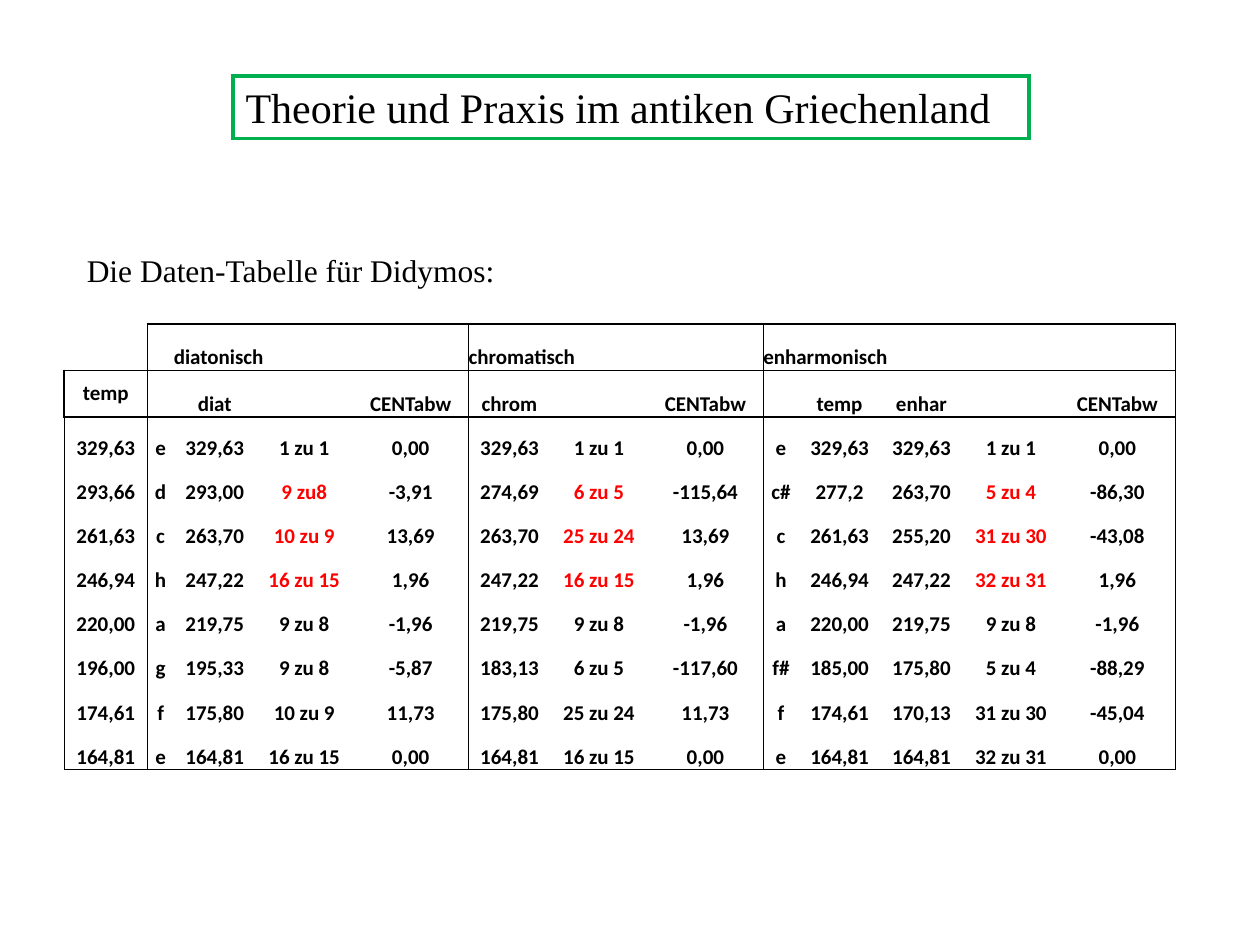
from lxml import etree
from pptx import Presentation
from pptx.dml.color import RGBColor
from pptx.enum.text import MSO_ANCHOR, PP_ALIGN
from pptx.oxml.ns import qn
from pptx.util import Inches, Pt

BOTTOM, MIDDLE = MSO_ANCHOR.BOTTOM, MSO_ANCHOR.MIDDLE
LEFT, CENTER = PP_ALIGN.LEFT, PP_ALIGN.CENTER
COLORS = {"text": "000000", "accent": "FF0000", "frame": "00B050", "paper": "FFFFFF"}
SERIF, SANS = "Times New Roman", "Calibri"
NO_GRID_STYLE = "{2D5ABB26-0587-4C30-8999-92F81FD0307C}"

COLUMN_WIDTHS = [0.66, 0.21, 0.65, 0.77, 0.92, 0.65, 0.77, 0.92, 0.28, 0.65, 0.65, 0.77, 0.92]
HEADER_HEIGHT, BODY_HEIGHT = 0.37, 0.35
HEADER_ROWS = 2
GENUS_STARTS, GENUS_ENDS = (0, 1, 5, 8), (0, 4, 7, 12)
GENUS_TITLES = {2: ("diatonisch", 2), 5: ("chromatisch", 2), 8: ("enharmonisch", 3)}
RATIO_COLUMNS, RATIO_ROWS = (3, 6, 11), (3, 4, 5)

COLUMN_TITLES = ["temp", "", "diat", "", "CENTabw", "chrom", "", "CENTabw",
                 "", "temp", "enhar", "", "CENTabw"]
PITCHES = [
    ["329,63", "e", "329,63", "1 zu 1", "0,00", "329,63", "1 zu 1", "0,00",
     "e", "329,63", "329,63", "1 zu 1", "0,00"],
    ["293,66", "d", "293,00", "9 zu8", "-3,91", "274,69", "6 zu 5", "-115,64",
     "c#", "277,2", "263,70", "5 zu 4", "-86,30"],
    ["261,63", "c", "263,70", "10 zu 9", "13,69", "263,70", "25 zu 24", "13,69",
     "c", "261,63", "255,20", "31 zu 30", "-43,08"],
    ["246,94", "h", "247,22", "16 zu 15", "1,96", "247,22", "16 zu 15", "1,96",
     "h", "246,94", "247,22", "32 zu 31", "1,96"],
    ["220,00", "a", "219,75", "9 zu 8", "-1,96", "219,75", "9 zu 8", "-1,96",
     "a", "220,00", "219,75", "9 zu 8", "-1,96"],
    ["196,00", "g", "195,33", "9 zu 8", "-5,87", "183,13", "6 zu 5", "-117,60",
     "f#", "185,00", "175,80", "5 zu 4", "-88,29"],
    ["174,61", "f", "175,80", "10 zu 9", "11,73", "175,80", "25 zu 24", "11,73",
     "f", "174,61", "170,13", "31 zu 30", "-45,04"],
    ["164,81", "e", "164,81", "16 zu 15", "0,00", "164,81", "16 zu 15", "0,00",
     "e", "164,81", "164,81", "32 zu 31", "0,00"],
]


def rgb(name):
    """Return the named colour."""
    return RGBColor.from_string(COLORS[name])


def write(frame, text, size, font, color="text", bold=False, align=LEFT):
    """Write one formatted run into a text frame."""
    paragraph = frame.paragraphs[0]
    paragraph.alignment = align
    run = paragraph.add_run()
    run.text = text
    for attribute, value in {"size": Pt(size), "name": font, "bold": bold}.items():
        setattr(run.font, attribute, value)
    run.font.color.rgb = rgb(color)


def add_line_of_text(slide, box, text, size, wrap=False):
    """Place a single line of serif text in the box."""
    label = slide.shapes.add_textbox(*map(Inches, box))
    label.text_frame.word_wrap = wrap
    write(label.text_frame, text, size, SERIF)
    return label


def add_title(slide, box):
    """Place the framed slide title."""
    title = add_line_of_text(slide, box, "Theorie und Praxis im antiken Griechenland", 24, True)
    title.fill.solid()
    title.fill.fore_color.rgb = rgb("paper")
    title.line.color.rgb = rgb("frame")
    title.line.width = Pt(2.25)
    outline = title._element.spPr.find(qn("a:ln"))
    etree.SubElement(outline, qn("a:miter"), lim="800000")


def cell_borders(row, column, last_row):
    """Return the border widths by side for one cell, zero meaning no line."""
    if (row, column) == (0, 0):
        return {"L": 0, "R": 1, "T": 0, "B": 1}
    is_header = row < HEADER_ROWS
    side_width = 1 if is_header else 0.5
    return {
        "L": side_width if column in GENUS_STARTS else 0,
        "R": side_width if column in GENUS_ENDS else 0,
        "T": 1 if row <= HEADER_ROWS else 0,
        "B": 1 if is_header else 0.5 if row == last_row else 0,
    }


def draw_borders(cell, borders):
    """Set each side of a table cell to a solid line or to none."""
    properties = cell._tc.get_or_add_tcPr()
    for side, width in borders.items():
        line = etree.SubElement(properties, qn(f"a:ln{side}"), w=str(Pt(width)))
        if width:
            fill = etree.SubElement(line, qn("a:solidFill"))
            etree.SubElement(fill, qn("a:srgbClr"), val=COLORS["text"])
        else:
            etree.SubElement(line, qn("a:noFill"))


def add_pitch_table(slide, box):
    """Place the table of pitches for the three genera."""
    genus_row = [GENUS_TITLES.get(column, ("", 1))[0] for column in range(len(COLUMN_WIDTHS))]
    rows = [genus_row, COLUMN_TITLES, *PITCHES]
    table = slide.shapes.add_table(len(rows), len(COLUMN_WIDTHS), *map(Inches, box)).table
    table._tbl.tblPr.find(qn("a:tableStyleId")).text = NO_GRID_STYLE
    table.first_row = table.horz_banding = False
    for column, width in zip(table.columns, COLUMN_WIDTHS):
        column.width = Inches(width)

    for r, texts in enumerate(rows):
        table.rows[r].height = Inches(HEADER_HEIGHT if r < HEADER_ROWS else BODY_HEIGHT)
        for c, text in enumerate(texts):
            cell = table.cell(r, c)
            for side in ("left", "right", "top", "bottom"):
                setattr(cell, f"margin_{side}", 0)
            cell.vertical_anchor = MIDDLE if (r, c) == (1, 0) else BOTTOM
            draw_borders(cell, cell_borders(r, c, len(rows) - 1))
            cell.fill.background()
            if text:
                color = "accent" if r in RATIO_ROWS and c in RATIO_COLUMNS else "text"
                write(cell.text_frame, text, 12, SANS, color, True, CENTER if r else LEFT)

    for start, (_, span) in GENUS_TITLES.items():
        table.cell(0, start).merge(table.cell(0, start + span - 1))


def main():
    """Build and save the slide."""
    deck = Presentation()
    deck.slide_width, deck.slide_height = Inches(10), Inches(7.5)
    slide = deck.slides.add_slide(deck.slide_layouts[6])
    add_title(slide, (1.85, 0.6, 6.32, 0.5))
    add_pitch_table(slide, (0.51, 2.57, 8.82, 3.54))
    add_line_of_text(slide, (0.59, 1.94, 3.45, 0.4), "Die Daten-Tabelle für Didymos:", 18)
    deck.save("out.pptx")


if __name__ == "__main__":
    main()
